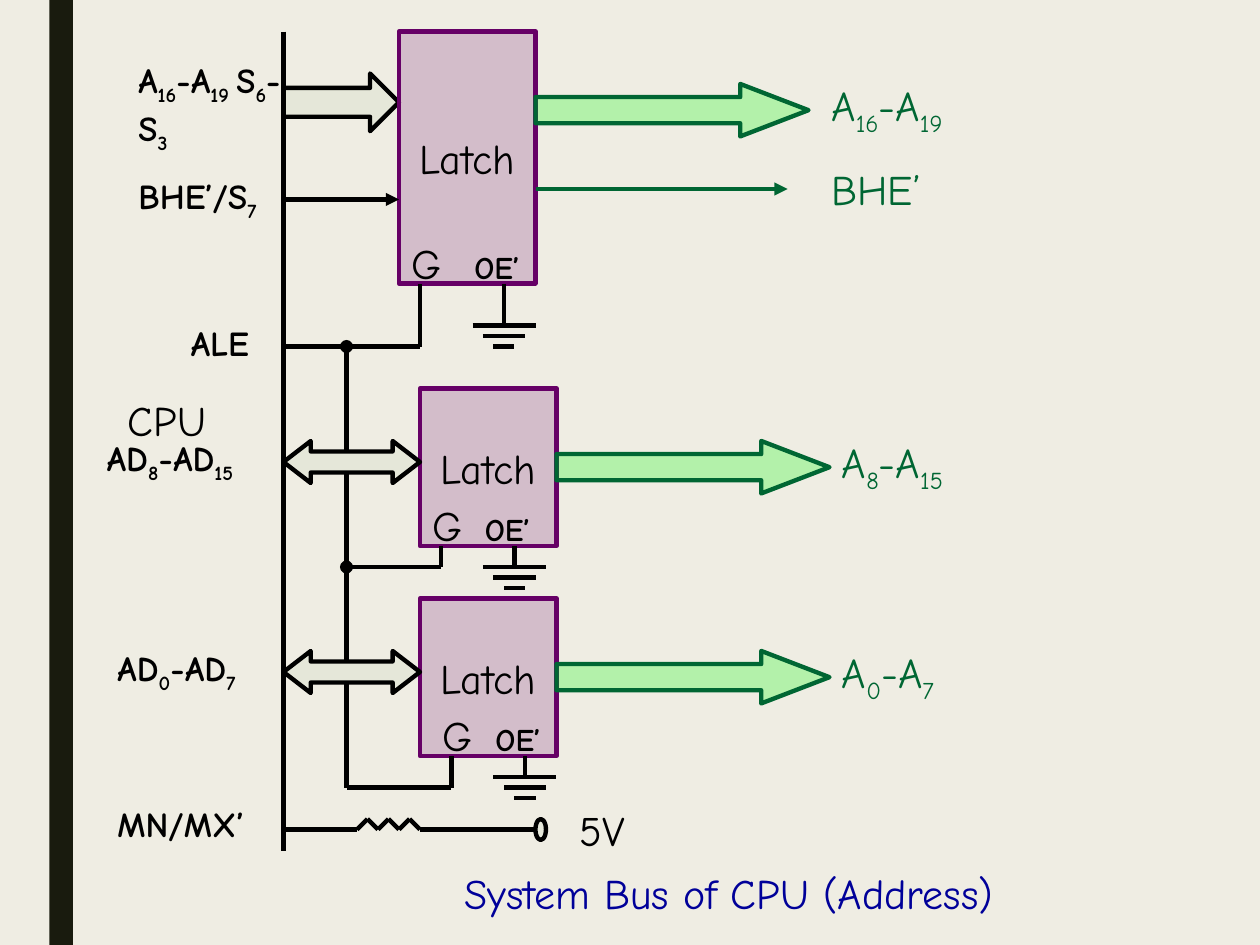
"""Build the slide showing the demultiplexed address bus of a processor system."""
from lxml import etree
from pptx import Presentation
from pptx.dml.color import RGBColor
from pptx.enum.shapes import MSO_CONNECTOR, MSO_SHAPE
from pptx.enum.text import MSO_ANCHOR, MSO_AUTO_SIZE, PP_ALIGN
from pptx.oxml.ns import qn
from pptx.util import Inches, Pt

STRAIGHT = MSO_CONNECTOR.STRAIGHT
RECT, OVAL = MSO_SHAPE.RECTANGLE, MSO_SHAPE.OVAL
RIGHT, BOTH = MSO_SHAPE.RIGHT_ARROW, MSO_SHAPE.LEFT_RIGHT_ARROW
TOP, MIDDLE = MSO_ANCHOR.TOP, MSO_ANCHOR.MIDDLE
FIT, NO_FIT = MSO_AUTO_SIZE.SHAPE_TO_FIT_TEXT, MSO_AUTO_SIZE.NONE
LEFT, CENTER = PP_ALIGN.LEFT, PP_ALIGN.CENTER

COLUMNS, ROWS = 120, 90
WIDTH, HEIGHT = Inches(10), Inches(7.5)
FONT = "Comic Neue"
BLACK, GREEN, PURPLE, BLUE = "000000", "006633", "660066", "000099"
PAPER, STRIPE, INPUT_TINT, OUTPUT_TINT = "EFEDE3", "191B0E", "3B812F", "00FF00"

CPU_EDGE, ALE_BUS = 27, 33
CAPTION = ("System Bus of CPU (Address)", 43, 82, 63, 6)

# Underscores enclose subscripts; positions are grid columns and rows.
CPU_PINS = [
    ("A_16_-A_19 _S_6_-S_3_", 12, 5, 17, 9.2),
    ("BHE’/S_7_", 12, 16, 19, 5.2),
    ("ALE", 17, 30, 14, 5.2),
    ("AD_8_-AD_15_", 9, 41, 20, 5.2),
    ("AD_0_-AD_7_", 10, 61, 20, 5.2),
    ("MN/MX’", 10, 75.8, 20, 5.2),
]
PLAIN_LABELS = [("CPU", 11, 37, 19, 6), ("5V", 54, 76, 9, 6)]
OUTPUTS = [
    ("A_16_-A_19_", 78, 7),
    ("BHE’", 78, 15),
    ("A_8_-A_15_", 79, 41),
    ("A_0_-A_7_", 79, 61),
]
LATCHES = [
    {"box": (38, 3, 13, 24), "output": 8, "gate": 40, "ale": 33, "enable": 48, "drop": 4},
    {"box": (40, 37, 13, 15), "output": 42, "gate": 42, "ale": 54, "enable": 49, "drop": 2},
    {"box": (40, 57, 13, 15), "output": 62, "gate": 43, "ale": 75, "enable": 50, "drop": 2},
]
ALE_SEGMENTS = [(33, 43), (45, 54), (54, 63), (65, 75)]
DATA_ROWS = [42, 62]
RESISTOR = [(34 + step, 79 - step % 2) for step in range(7)]


def rgb(value):
    return RGBColor.from_string(value)


def place(column, row):
    return round(WIDTH * column / COLUMNS), round(HEIGHT * row / ROWS)


def write(frame, text, size, color=BLACK, bold=False, align=LEFT):
    paragraph = frame.paragraphs[0]
    paragraph.alignment = align
    font = paragraph.font
    font.name, font.size, font.bold = FONT, Pt(size), bold
    font.color.rgb = rgb(color)
    for index, part in enumerate(text.split("_")):
        if part:
            run = paragraph.add_run()
            run.text = part
            if index % 2:
                run._r.get_or_add_rPr().set("baseline", "-25000")


def add_label(slide, text, column, row, columns, rows, size=24, color=BLACK, bold=False):
    box = slide.shapes.add_textbox(*place(column, row), *place(columns, rows))
    box.text_frame.word_wrap = True
    box.text_frame.auto_size = FIT
    write(box.text_frame, text, size, color, bold)


def add_block(slide, kind, box, fill, opacity, outline, adjustments=()):
    block = slide.shapes.add_shape(kind, *place(*box[:2]), *place(*box[2:]))
    block.shadow.inherit = False
    block.fill.solid()
    block.fill.fore_color.rgb = rgb(fill)
    tint = block._element.spPr.find(".//" + qn("a:srgbClr"))
    etree.SubElement(tint, qn("a:alpha")).set("val", str(opacity * 1000))
    block.line.color.rgb = rgb(outline)
    block.line.width = Pt(2.5)
    for index, value in enumerate(adjustments):
        block.adjustments[index] = value
    return block


def add_wire(slide, *points, color=BLACK, dot=False, arrow=False):
    for index, (start, end) in enumerate(zip(points, points[1:])):
        wire = slide.shapes.add_connector(STRAIGHT, *place(*start), *place(*end))
        wire.line.color.rgb = rgb(color)
        wire.line.width = Pt(2.5)
        outline = wire.line._get_or_add_ln()
        if dot and index == 0:
            etree.SubElement(outline, qn("a:headEnd")).set("type", "oval")
        if arrow and index == len(points) - 2:
            etree.SubElement(outline, qn("a:tailEnd")).set("type", "triangle")
        etree.SubElement(wire._element.spPr, qn("a:effectLst"))


def add_latch(slide, latch):
    left, top, columns, rows = latch["box"]
    right, bottom = left + columns, top + rows
    chip = add_block(slide, RECT, latch["box"], PURPLE, 20, PURPLE)
    chip.text_frame.word_wrap = False
    chip.text_frame.vertical_anchor = MIDDLE
    write(chip.text_frame, "Latch", 24, align=CENTER)
    add_block(slide, RIGHT, (right, latch["output"], 26, 5), OUTPUT_TINT, 25, GREEN, (0.5, 1.3))

    gate, enable = latch["gate"], latch["enable"]
    add_label(slide, "G", gate - 2, bottom - 5, 7, 6)
    add_label(slide, "OE’", enable - 4, bottom - 4, 9, 4.8, 18, bold=True)
    ground = bottom + latch["drop"]
    add_wire(slide, (enable, bottom), (enable, ground))
    for step, half in enumerate((3, 2, 1)):
        add_wire(slide, (enable - half, ground + step), (enable + half, ground + step))


def main():
    deck = Presentation()
    deck.slide_width, deck.slide_height = WIDTH, HEIGHT
    slide = deck.slides.add_slide(deck.slide_layouts[5])
    slide.background.fill.solid()
    slide.background.fill.fore_color.rgb = rgb(PAPER)

    stripe = slide.shapes.add_shape(RECT, *place(4.7, 0), *place(2.25, ROWS))
    stripe.shadow.inherit = False
    stripe.fill.solid()
    stripe.fill.fore_color.rgb = rgb(STRIPE)
    stripe.line.fill.background()

    text, *area = CAPTION
    caption = slide.shapes.title
    caption.left, caption.top = place(*area[:2])
    caption.width, caption.height = place(*area[2:])
    caption.text_frame.vertical_anchor = TOP
    caption.text_frame.auto_size = NO_FIT
    write(caption.text_frame, text, 24, BLUE)

    add_wire(slide, (CPU_EDGE, 3), (CPU_EDGE, 81))
    add_block(slide, RIGHT, (CPU_EDGE, 7, 11, 5.5), INPUT_TINT, 5, BLACK, (0.5, 0.5))
    for latch in LATCHES:
        add_latch(slide, latch)
    for row in DATA_ROWS:
        add_block(slide, BOTH, (CPU_EDGE, row, 13, 4), INPUT_TINT, 5, BLACK, (0.5, 0.65))

    for start, end in ALE_SEGMENTS:
        add_wire(slide, (ALE_BUS, start), (ALE_BUS, end), dot=start in (33, 54))
    add_wire(slide, (CPU_EDGE, 33), (ALE_BUS, 33))
    for latch in LATCHES:
        gate, ale = latch["gate"], latch["ale"]
        bottom = latch["box"][1] + latch["box"][3]
        add_wire(slide, (ALE_BUS, ale), (gate, ale), (gate, bottom))
    add_wire(slide, (CPU_EDGE, 19), (38, 19), arrow=True)
    add_wire(slide, (51, 18), (75, 18), color=GREEN, arrow=True)
    add_wire(slide, (CPU_EDGE, 79), *RESISTOR, (51, 79))
    add_block(slide, OVAL, (51, 78, 1, 2), INPUT_TINT, 5, BLACK)

    for pin in CPU_PINS:
        add_label(slide, *pin, size=20, bold=True)
    for label in PLAIN_LABELS:
        add_label(slide, *label)
    for text, column, row in OUTPUTS:
        add_label(slide, text, column, row, 24, 6, color=GREEN)
    deck.save("out.pptx")


if __name__ == "__main__":
    main()
